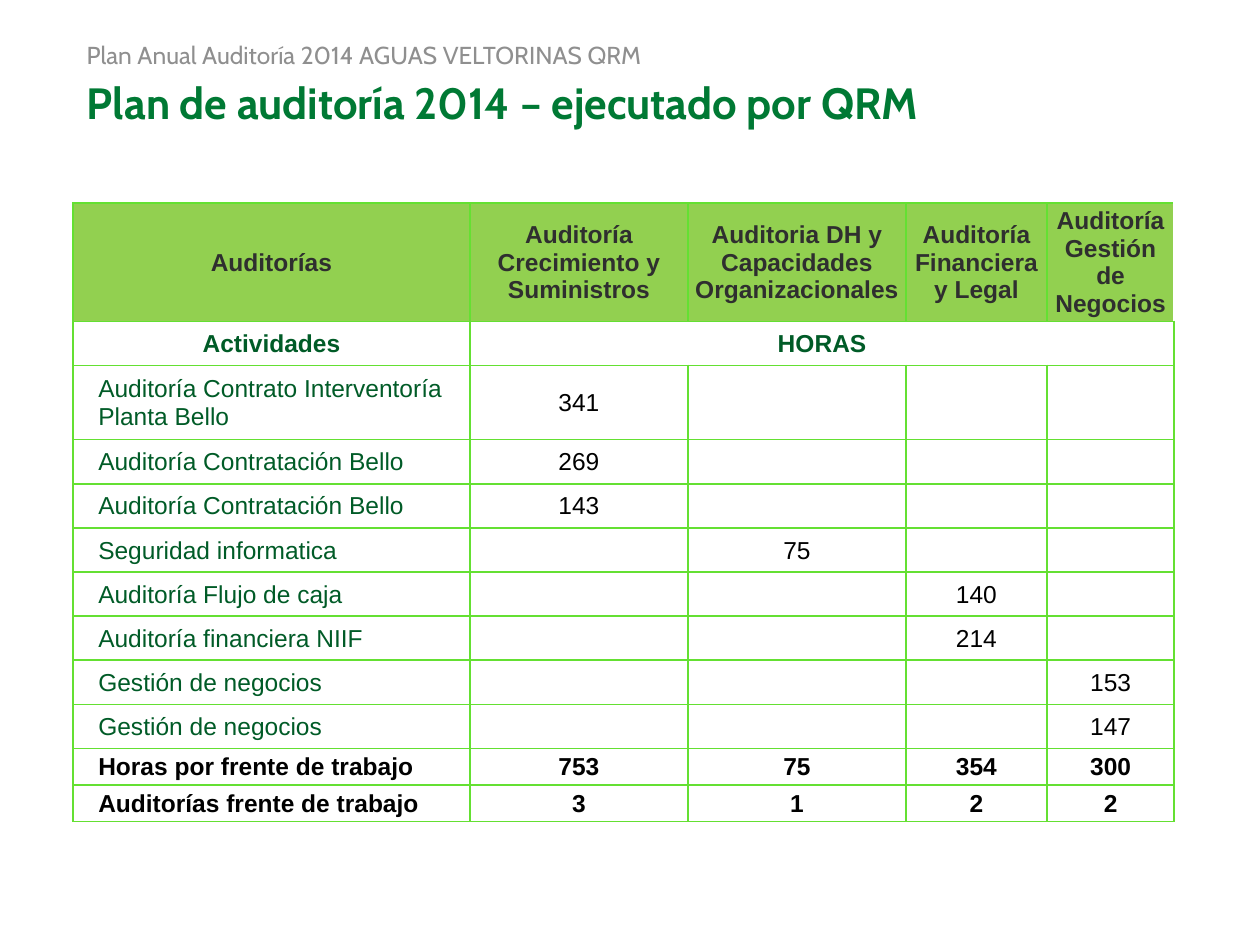
from lxml import etree
from pptx import Presentation
from pptx.dml.color import RGBColor
from pptx.enum.text import MSO_ANCHOR, MSO_AUTO_SIZE, PP_ALIGN
from pptx.oxml.ns import qn
from pptx.util import Inches, Pt

LEFT, CENTER = PP_ALIGN.LEFT, PP_ALIGN.CENTER
MIDDLE, BOTTOM = MSO_ANCHOR.MIDDLE, MSO_ANCHOR.BOTTOM
NO_FIT = MSO_AUTO_SIZE.NONE

COLORS = {
    "subtitle": "8F8F8F",
    "title": "007934",
    "header_fill": "92D050",
    "header_text": "2F2F2F",
    "activity": "005B27",
    "value": "000000",
    "border": "64E032",
}

SUBTITLE = "Plan Anual Auditoría 2014 AGUAS VELTORINAS QRM"
TITLE = "Plan de auditoría 2014 – ejecutado por QRM"
HEADERS = [
    "Auditorías",
    "Auditoría Crecimiento y Suministros",
    "Auditoria DH y Capacidades Organizacionales",
    "Auditoría Financiera y Legal",
    "Auditoría Gestión de Negocios",
]
UNITS = ["Actividades", "HORAS", "", "", ""]
ACTIVITIES = [
    ("Auditoría Contrato Interventoría Planta Bello", 1, 341),
    ("Auditoría Contratación Bello", 1, 269),
    ("Auditoría Contratación Bello", 1, 143),
    ("Seguridad informatica", 2, 75),
    ("Auditoría Flujo de caja", 3, 140),
    ("Auditoría financiera NIIF", 3, 214),
    ("Gestión de negocios", 4, 153),
    ("Gestión de negocios", 4, 147),
]
TOTALS = [
    ["Horas por frente de trabajo", 753, 75, 354, 300],
    ["Auditorías frente de trabajo", 3, 1, 2, 2],
]

TEXT_LEFT, TEXT_WIDTH = 0.59, 8.5
TABLE_LEFT, TABLE_TOP = 0.58, 1.61
COLUMN_WIDTHS = [3.15, 1.73, 1.73, 1.12, 1.01]
ROW_HEIGHTS = [0.94, 0.35, 0.59] + [0.35] * 7 + [0.29] * 2


def set_values(target, values):
    for name, value in values.items():
        setattr(target, name, value)


def write(frame, text, size, font_name, color, bold, align=LEFT):
    paragraph = frame.paragraphs[0]
    paragraph.alignment = align
    if text == "":
        return
    run = paragraph.add_run()
    run.text = str(text)
    set_values(run.font, {"size": Pt(size), "name": font_name, "bold": bold})
    run.font.color.rgb = RGBColor.from_string(COLORS[color])


def place_heading(shape, top, height, text, size, color, bold):
    set_values(shape, {
        "left": Inches(TEXT_LEFT), "top": Inches(top),
        "width": Inches(TEXT_WIDTH), "height": Inches(height),
    })
    set_values(shape.text_frame, {
        "word_wrap": True, "auto_size": NO_FIT, "vertical_anchor": BOTTOM,
    })
    write(shape.text_frame, text, size, "Cabin", color, bold)


def add_borders(cell, sides):
    properties = cell._tc.get_or_add_tcPr()
    for index, side in enumerate(sides):
        line = etree.Element(qn("a:ln" + side), w=str(Pt(1)))
        fill = etree.SubElement(line, qn("a:solidFill"))
        etree.SubElement(fill, qn("a:srgbClr"), val=COLORS["border"])
        properties.insert(index, line)


def table_rows():
    yield HEADERS, "header_text", "header_text", True
    yield UNITS, "activity", "activity", True
    for name, column, hours in ACTIVITIES:
        values = [hours if i == column else "" for i in range(1, len(HEADERS))]
        yield [name] + values, "activity", "value", False
    for totals in TOTALS:
        yield totals, "value", "value", True


def add_audit_table(slide):
    table = slide.shapes.add_table(
        len(ROW_HEIGHTS), len(COLUMN_WIDTHS), Inches(TABLE_LEFT), Inches(TABLE_TOP),
        Inches(sum(COLUMN_WIDTHS)), Inches(sum(ROW_HEIGHTS)),
    ).table
    set_values(table, {"first_row": False, "horz_banding": False})
    for column, width in zip(table.columns, COLUMN_WIDTHS):
        column.width = Inches(width)
    for row, height in zip(table.rows, ROW_HEIGHTS):
        row.height = Inches(height)
    table.cell(1, 1).merge(table.cell(1, len(HEADERS) - 1))

    for r, (texts, name_color, value_color, bold) in enumerate(table_rows()):
        for c, text in enumerate(texts):
            cell = table.cell(r, c)
            is_name = c == 0 and r > 1
            side_margin = 0.04 if r == 0 else 0.01
            set_values(cell, {
                "margin_left": Inches(0.2 if is_name else side_margin),
                "margin_right": Inches(side_margin),
                "margin_top": Inches(0.01),
                "margin_bottom": 0,
                "vertical_anchor": MIDDLE,
            })
            if r == 0:
                cell.fill.solid()
                cell.fill.fore_color.rgb = RGBColor.from_string(COLORS["header_fill"])
            else:
                cell.fill.background()
            is_header_end = r == 0 and c == len(HEADERS) - 1
            add_borders(cell, "LTB" if is_header_end else "LRTB")
            write(cell.text_frame, text, 14, "Arial",
                  name_color if c == 0 else value_color, bold,
                  LEFT if is_name else CENTER)


def main():
    presentation = Presentation()
    set_values(presentation, {"slide_width": Inches(10), "slide_height": Inches(7.5)})
    slide = presentation.slides.add_slide(presentation.slide_layouts[5])
    subtitle = slide.shapes.add_textbox(0, 0, 0, 0)
    place_heading(subtitle, 0.29, 0.31, SUBTITLE, 14, "subtitle", False)
    place_heading(slide.shapes.title, 0.6, 0.47, TITLE, 25, "title", True)
    add_audit_table(slide)
    presentation.save("out.pptx")


if __name__ == "__main__":
    main()
